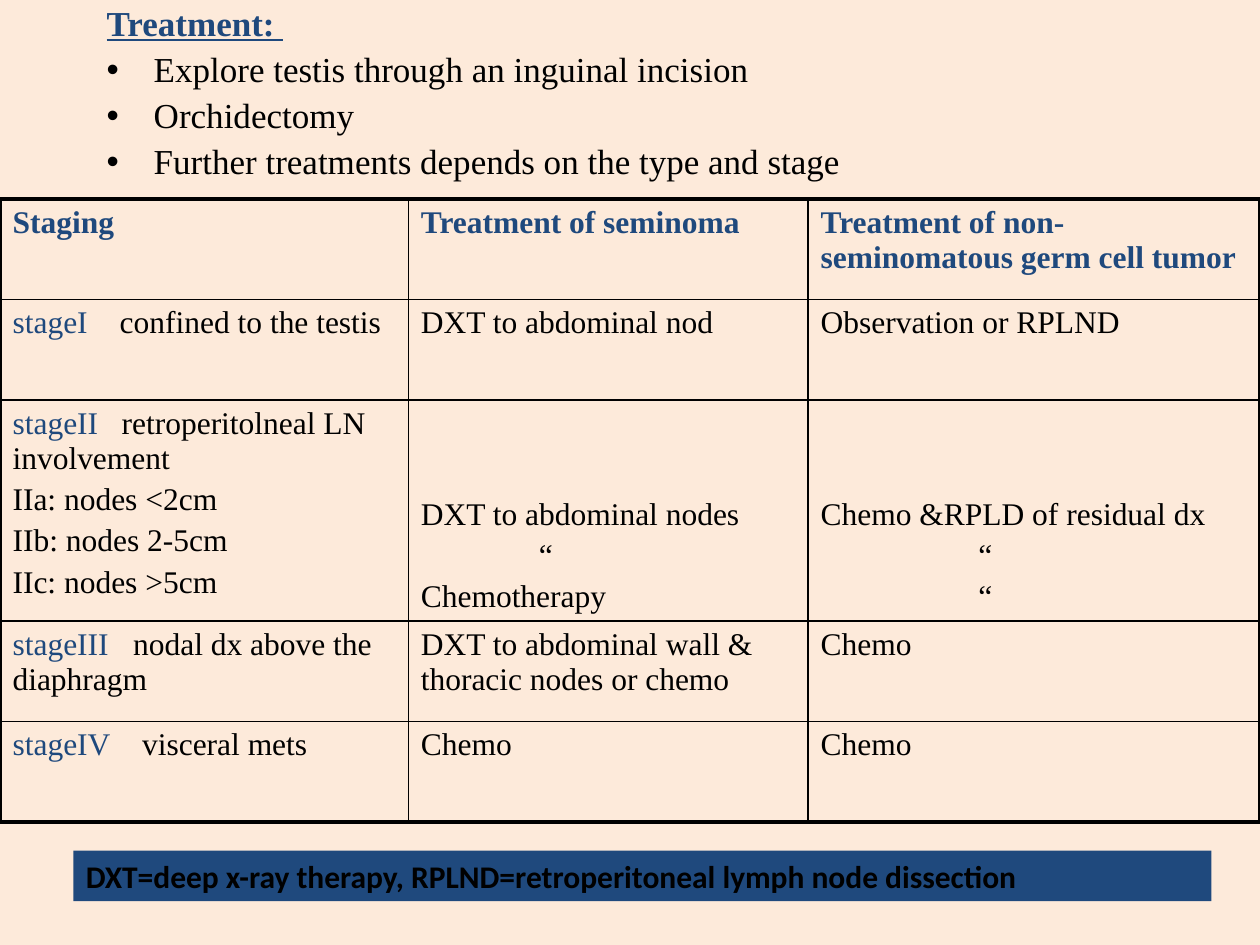
from lxml.etree import SubElement
from pptx import Presentation
from pptx.dml.color import RGBColor
from pptx.enum.shapes import MSO_SHAPE
from pptx.enum.text import MSO_ANCHOR, PP_ALIGN
from pptx.oxml.ns import qn
from pptx.util import Cm, Pt

COLORS = {"background": "FDEADA", "navy": "1F497D", "black": "000000"}
SERIF = "Times New Roman"

HEADING = "Treatment: "
STEPS = [
    "Explore testis through an inguinal incision",
    "Orchidectomy",
    "Further treatments depends on the type and stage",
]
HEADERS = ["Staging", "Treatment of seminoma", "Treatment of non-seminomatous germ cell tumor"]
# Stage name, tab position in cm, description, sub-stages, seminoma lines, other tumor lines
STAGES = [
    ("stageI", 2.16, "confined to the testis", [], ["DXT to abdominal nod"], ["Observation or RPLND"]),
    ("stageII", 2.2, "retroperitolneal LN involvement",
     ["IIa: nodes <2cm", "IIb: nodes 2-5cm", "IIc: nodes >5cm"],
     ["DXT to abdominal nodes", "“", "Chemotherapy"],
     ["Chemo &RPLD of residual dx", "“", "“"]),
    ("stageIII", 2.43, "nodal dx above the diaphragm", [],
     ["DXT to abdominal wall & thoracic nodes or chemo"], ["Chemo"]),
    ("stageIV", 2.61, "visceral mets", [], ["Chemo"], ["Chemo"]),
]
LEGEND = "DXT=deep x-ray therapy, RPLND=retroperitoneal lymph node dissection"

COLUMN_WIDTHS = [8.23, 8.06, 9.11]
ROW_HEIGHTS = [2.03, 2.03, 4.27, 2.03, 2.03]
DITTO_INDENTS = [0, 2.38, 3.18]
THIN, THICK = 1, 2.25


def add_span(para, text, size, color="black", font=SERIF, bold=False, underline=False):
    span = para.add_run()
    span.text = text
    span.font.name = font
    span.font.size = Pt(size)
    span.font.bold = bold
    span.font.underline = underline
    span.font.color.rgb = RGBColor.from_string(COLORS[color])


def next_paragraph(frame):
    """Return the empty first paragraph, or a new one after existing text."""
    first = frame.paragraphs[0]
    return frame.add_paragraph() if first.runs else first


def add_line(cell, text, **style):
    para = next_paragraph(cell.text_frame)
    para.space_before = Pt(3.6)
    add_span(para, text, 18, **style)
    return para


def set_borders(cell, widths):
    """Draw left, right, top and bottom borders ahead of the cell's fill."""
    properties = cell._tc.get_or_add_tcPr()
    for index, (side, width) in enumerate(zip(("lnL", "lnR", "lnT", "lnB"), widths)):
        line = SubElement(properties, qn(f"a:{side}"), w=str(Pt(width)))
        fill = SubElement(line, qn("a:solidFill"))
        SubElement(fill, qn("a:srgbClr"), val=COLORS["black"])
        properties.insert(index, line)


def add_treatment_list(slide):
    box = slide.shapes.add_textbox(Cm(1.9), 0, Cm(19.05), Cm(4.01))
    frame = box.text_frame
    frame.word_wrap = True
    for text in [HEADING, *STEPS]:
        para = next_paragraph(frame)
        para.line_spacing = 0.9
        para.space_before = Pt(4.8)
        properties = para._p.get_or_add_pPr()
        properties.set("marL", str(Cm(0.95)))
        properties.set("indent", str(Cm(-0.95)))
        if text == HEADING:
            add_span(para, text, 20, "navy", bold=True, underline=True)
        else:
            SubElement(properties, qn("a:buFont"), typeface="Arial")
            SubElement(properties, qn("a:buChar"), char="•")
            add_span(para, text, 20)


def add_staging_table(slide):
    rows, columns = len(ROW_HEIGHTS), len(COLUMN_WIDTHS)
    table = slide.shapes.add_table(
        rows, columns, 0, Cm(4.01), Cm(sum(COLUMN_WIDTHS)), Cm(sum(ROW_HEIGHTS))
    ).table
    table.first_row = table.horz_banding = False
    for column, width in zip(table.columns, COLUMN_WIDTHS):
        column.width = Cm(width)
    for row, height in zip(table.rows, ROW_HEIGHTS):
        row.height = Cm(height)

    for column, header in enumerate(HEADERS):
        add_line(table.cell(0, column), header, color="navy", bold=True)

    for row, (stage, tab, description, substages, *treatments) in enumerate(STAGES, 1):
        cell = table.cell(row, 0)
        para = add_line(cell, stage, color="navy")
        tabs = SubElement(para._p.get_or_add_pPr(), qn("a:tabLst"))
        SubElement(tabs, qn("a:tab"), pos=str(Cm(tab)), algn="l")
        add_span(para, "\t" + description, 18)
        for substage in substages:
            add_line(cell, substage)
        for column, lines in enumerate(treatments, 1):
            cell = table.cell(row, column)
            if substages:
                cell.vertical_anchor = MSO_ANCHOR.BOTTOM
            for text in lines:
                para = add_line(cell, text)
                if text == "“":
                    para._p.get_or_add_pPr().set("marL", str(Cm(DITTO_INDENTS[column])))

    for row in range(rows):
        for column in range(columns):
            cell = table.cell(row, column)
            cell.fill.background()
            outer = (column == 0, column == columns - 1, row == 0, row == rows - 1)
            set_borders(cell, [THICK if edge else THIN for edge in outer])


def add_legend(slide):
    bar = slide.shapes.add_shape(MSO_SHAPE.RECTANGLE, Cm(1.48), Cm(17.15), Cm(22.94), Cm(1.02))
    bar.shadow.inherit = False
    bar.fill.solid()
    bar.fill.fore_color.rgb = RGBColor.from_string(COLORS["navy"])
    bar.line.fill.background()
    frame = bar.text_frame
    frame.word_wrap = False
    frame.vertical_anchor = MSO_ANCHOR.TOP
    para = frame.paragraphs[0]
    para.alignment = PP_ALIGN.LEFT
    add_span(para, LEGEND, 18, font="Calibri", bold=True)


def main():
    deck = Presentation()
    deck.slide_width, deck.slide_height = Cm(25.4), Cm(19.05)
    slide = deck.slides.add_slide(deck.slide_layouts[6])
    slide.background.fill.solid()
    slide.background.fill.fore_color.rgb = RGBColor.from_string(COLORS["background"])
    add_treatment_list(slide)
    add_staging_table(slide)
    add_legend(slide)
    deck.save("out.pptx")


if __name__ == "__main__":
    main()
